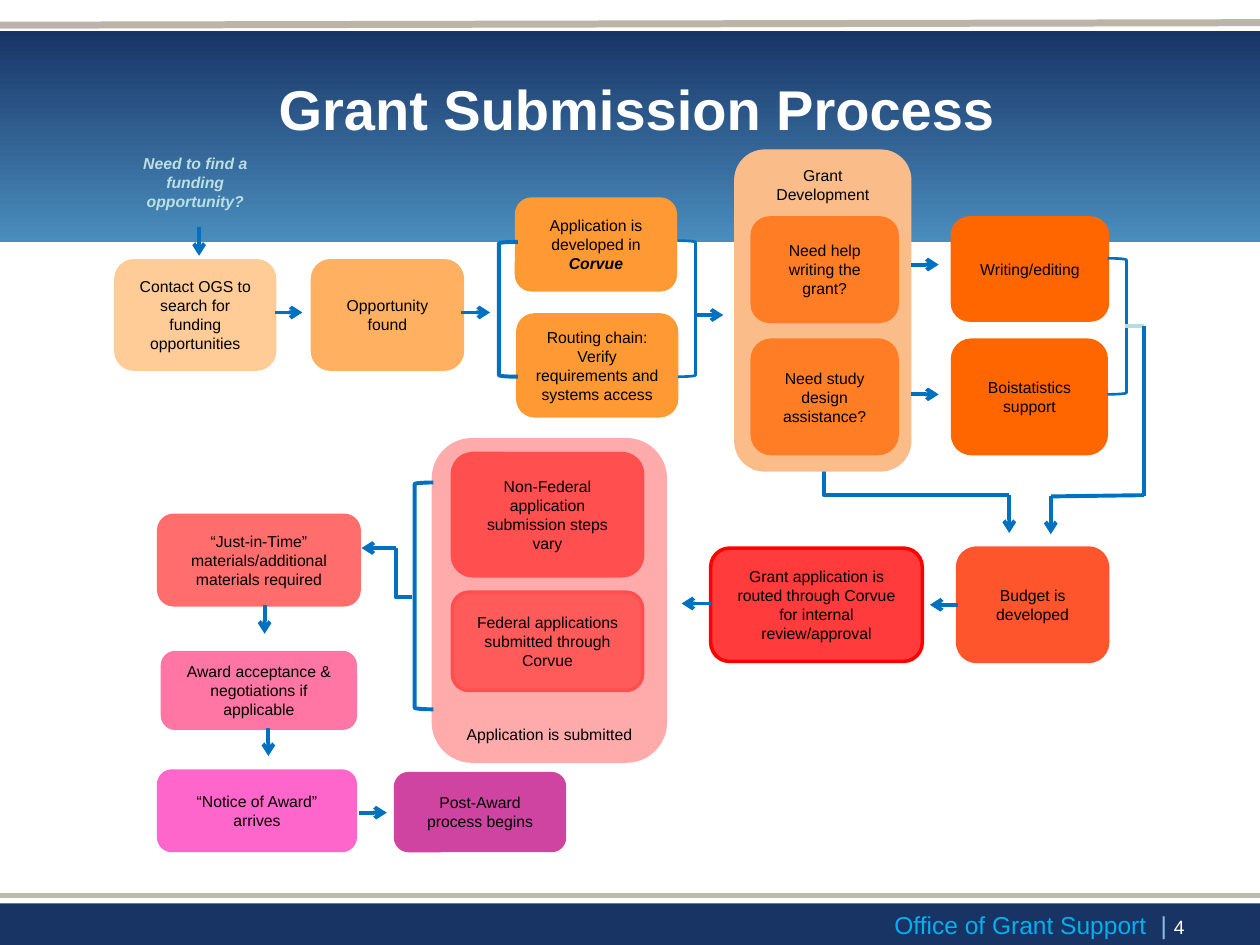
"""Build the grant submission process flow slide."""
from lxml.etree import SubElement as Sub
from pptx import Presentation
from pptx.dml.color import RGBColor as RGB
from pptx.enum.shapes import MSO_CONNECTOR as Link, MSO_SHAPE as Kind
from pptx.enum.text import MSO_ANCHOR as Anchor, PP_ALIGN as Align
from pptx.oxml.ns import qn
from pptx.util import Inches, Pt

BLACK = RGB(0, 0, 0)
WHITE = RGB(255, 255, 255)
BLUE = RGB(0x00, 0x70, 0xC0)
NAVY = RGB(0x18, 0x34, 0x65)
DUSK = RGB(0x19, 0x35, 0x67)
SKY = RGB(0x49, 0x8D, 0xBD)
SAGE = RGB(0xBB, 0xBC, 0xA9)
SAND = RGB(0xBC, 0xB3, 0xA9)
ICE = RGB(0xBB, 0xE0, 0xE3)
MINT = RGB(0xB6, 0xDC, 0xDF)
CYAN = RGB(0x00, 0xB0, 0xF0)
PALE = RGB(0x8F, 0xBE, 0xDC)
RED = RGB(0xFF, 0, 0)
PEACH = RGB(0xFA, 0xBD, 0x8A)
CREAM = RGB(0xFF, 0xCB, 0x97)
APRICOT = RGB(0xFF, 0xB0, 0x61)
AMBER = RGB(0xFF, 0x99, 0x33)
ORANGE = RGB(0xFF, 0x7D, 0x25)
RUST = RGB(0xFF, 0x66, 0x00)
EMBER = RGB(0xFF, 0x55, 0x2D)
SCARLET = RGB(0xFF, 0x3B, 0x3B)
BLUSH = RGB(0xFF, 0xAB, 0xAB)
CORAL = RGB(0xFF, 0x4F, 0x4F)
SALMON = RGB(0xFF, 0x5B, 0x5B)
ROSE = RGB(0xFF, 0x6D, 0x6D)
PINK = RGB(0xFF, 0x75, 0xA3)
ORCHID = RGB(0xFF, 0x66, 0xCC)
PLUM = RGB(0xD0, 0x44, 0xA1)

TOP, MID, LOW = Anchor.TOP, Anchor.MIDDLE, Anchor.BOTTOM
BODY = {"name": "Arial", "size": Pt(9)}
SLANT = {**BODY, "bold": True, "italic": True}
HEAD = {"name": "Arial", "size": Pt(32), "bold": True}
FOOT = {"name": "Arial", "size": Pt(14)}
PAGE = {"name": "Arial", "size": Pt(11)}

NOTES = [
    ((1.17, 0.54, 7.77, 0.64), Align.CENTER, True,
     [[("Grant Submission Process", HEAD, WHITE)]]),
    ((0.92, 1.17, 1.26, 0.67), Align.CENTER, True,
     [[("Need to find a funding", SLANT, ICE)], [("opportunity?", SLANT, ICE)]]),
    ((7, 7.17, 2.21, 0.34), Align.LEFT, False,
     [[("Office of Grant Support", FOOT, CYAN)]]),
    ((8.75, 7.17, 0.75, 0.33), Align.RIGHT, True,
     [[("| ", FOOT, PALE), ("4", PAGE, WHITE)]]),
]

STEPS = [
    ((5.84, 1.2, 1.38, 2.53), PEACH, PEACH, TOP, "Grant Development"),
    ((3.44, 3.49, 1.84, 2.55), BLUSH, BLUSH, LOW, "Application is submitted"),
    ((0.92, 2.07, 1.26, 0.86), CREAM, CREAM, MID,
     "Contact OGS to search for funding opportunities"),
    ((2.48, 2.07, 1.19, 0.86), APRICOT, APRICOT, MID, "Opportunity found"),
    ((4.1, 1.58, 1.26, 0.72), AMBER, AMBER, MID,
     "Application is developed in ", "Corvue"),
    ((4.11, 2.5, 1.26, 0.8), AMBER, AMBER, MID,
     "Routing chain: Verify requirements and systems access"),
    ((5.97, 1.73, 1.15, 0.82), ORANGE, ORANGE, MID, "Need help writing the grant?"),
    ((5.97, 2.7, 1.15, 0.9), ORANGE, ORANGE, MID, "Need study design assistance?"),
    ((7.56, 1.73, 1.23, 0.81), RUST, RUST, MID, "Writing/editing"),
    ((7.56, 2.7, 1.22, 0.9), RUST, RUST, MID, "Boistatistics support"),
    ((7.6, 4.35, 1.19, 0.9), EMBER, EMBER, MID, "Budget is developed"),
    ((5.64, 4.35, 1.68, 0.9), SCARLET, RED, MID,
     "Grant application is routed through Corvue for internal review/approval"),
    ((3.59, 3.6, 1.51, 0.97), CORAL, CORAL, MID,
     "Non-Federal application submission steps vary"),
    ((3.59, 4.7, 1.51, 0.78), SALMON, CORAL, MID,
     "Federal applications submitted through Corvue"),
    ((1.26, 4.09, 1.59, 0.71), ROSE, ROSE, MID,
     "“Just-in-Time” materials/additional materials required"),
    ((1.29, 5.18, 1.53, 0.6), PINK, PINK, MID,
     "Award acceptance & negotiations if applicable"),
    ((1.26, 6.12, 1.56, 0.63), ORCHID, ORCHID, MID, "“Notice of Award” arrives"),
    ((3.14, 6.14, 1.34, 0.61), PLUM, PLUM, MID, "Post-Award process begins"),
]

ARROWS = [
    (1.58, 1.8, 1.58, 2.03), (2.18, 2.48, 2.4, 2.48), (3.66, 2.48, 3.89, 2.48),
    (5.51, 2.5, 5.74, 2.5), (7.23, 2.1, 7.45, 2.1), (7.23, 3.13, 7.45, 3.13),
    (8.01, 3.93, 8.01, 4.23), (8.34, 3.94, 8.34, 4.24), (7.6, 4.8, 7.38, 4.8),
    (5.64, 4.79, 5.41, 4.79), (3.14, 4.35, 2.87, 4.35), (2.1, 4.8, 2.1, 5.03),
    (2.13, 5.78, 2.13, 6), (2.85, 6.45, 3.07, 6.45),
]
LINES = [
    ((8.93, 2.59, 9.08, 2.59), MINT), ((9.08, 2.59, 9.08, 3.94), BLUE),
    ((9.08, 3.93, 8.34, 3.94), BLUE),
]
BENDS = [
    [(6.54, 3.6), (6.54, 3.93), (8.01, 3.93)],
    [(3.27, 4.74), (3.14, 4.74), (3.14, 4.35)],
]
BRACKETS = [
    (Kind.LEFT_BRACKET, (3.96, 1.92, 0.15, 1.07), 2.25),
    (Kind.RIGHT_BRACKET, (5.38, 1.91, 0.14, 1.08), 1.5),
    (Kind.RIGHT_BRACKET, (8.79, 2.05, 0.15, 1.08), 1.5),
    (Kind.LEFT_BRACKET, (3.29, 3.83, 0.15, 1.8), 2.25),
]

deck = Presentation()
deck.slide_width, deck.slide_height = Inches(10), Inches(7.5)
slide = deck.slides.add_slide(deck.slide_layouts[6])
shapes = slide.shapes


def apply(item, values):
    for key, value in values.items():
        setattr(item, key, value)


def stroke(item, color, width):
    item.line.color.rgb = color
    item.line.width = Pt(width)


def paint(item, fill=None, edge=None, width=2):
    item.shadow.inherit = False
    if fill is None:
        item.fill.background()
    else:
        item.fill.solid()
        item.fill.fore_color.rgb = fill
    if edge is None:
        item.line.fill.background()
    else:
        stroke(item, edge, width)
    return item


def shape(kind, at, *look):
    return paint(shapes.add_shape(kind, *map(Inches, at)), *look)


def line(ends, color=BLUE, width=2.25, arrow=False):
    item = shapes.add_connector(Link.STRAIGHT, *map(Inches, ends))
    stroke(item, color, width)
    if arrow:
        Sub(item.line._get_or_add_ln(), qn("a:tailEnd"), type="arrow")
    Sub(item._element.spPr, qn("a:effectLst"))


def write(item, paras, align=Align.CENTER, anchor=TOP, wrap=True):
    frame = item.text_frame
    apply(frame, {"word_wrap": wrap, "vertical_anchor": anchor})
    for i, runs in enumerate(paras):
        para = frame.add_paragraph() if i else frame.paragraphs[0]
        para.alignment = align
        for text, font, color in runs:
            run = para.add_run()
            run.text = text
            apply(run.font, font)
            run.font.color.rgb = color


def bend(points):
    start, *rest = [tuple(map(Inches, point)) for point in points]
    path = shapes.build_freeform(*start)
    path.add_line_segments(rest, close=False)
    paint(path.convert_to_shape(), None, BLUE, 2.25)


shape(Kind.RECTANGLE, (0, 7.17, 10, 0.33), NAVY)
line((0, 7.11, 10, 7.11), SAGE, 3)
band = shape(Kind.RECTANGLE, (0, 0.25, 10, 1.67), DUSK)
band.fill.gradient()
band.fill.gradient_angle = 270
for stop, place, color in zip(band.fill.gradient_stops, (0, 1), (DUSK, SKY)):
    stop.position = place
    stop.color.rgb = color
line((0, 0.2, 10, 0.18), SAND, 4)

for points in BENDS:
    bend(points)
for at, fill, edge, anchor, text, *accent in STEPS:
    runs = [(text, BODY, BLACK)] + [(word, SLANT, BLACK) for word in accent]
    write(shape(Kind.ROUNDED_RECTANGLE, at, fill, edge), [runs], anchor=anchor)
for kind, at, width in BRACKETS:
    shape(kind, at, None, BLUE, width)
for ends, color in LINES:
    line(ends, color)
for ends in ARROWS:
    line(ends, arrow=True)
for at, align, wrap, paras in NOTES:
    write(shapes.add_textbox(*map(Inches, at)), paras, align, wrap=wrap)

deck.save("out.pptx")
